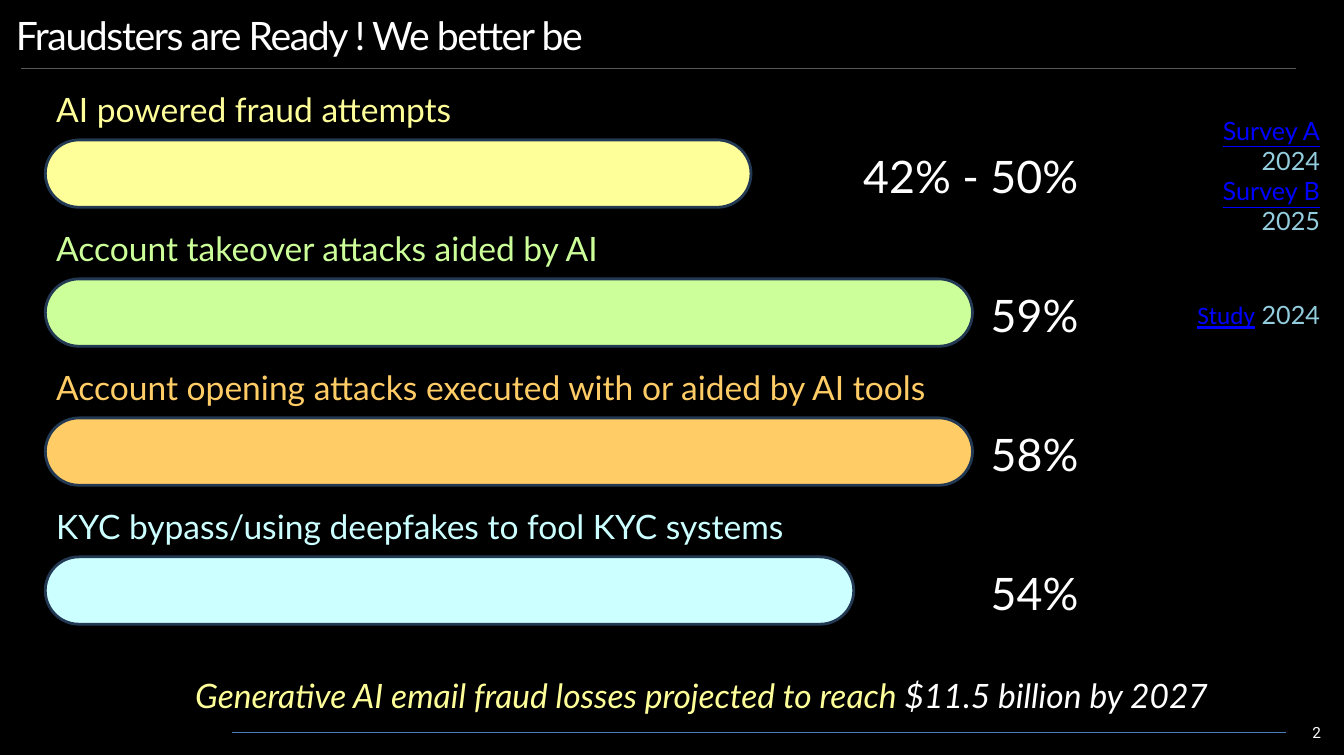
from dataclasses import dataclass

import pptx
import pptx.dml.color
import pptx.enum.shapes
import pptx.enum.text
import pptx.oxml
import pptx.util

Pt = pptx.util.Pt
Align = pptx.enum.text.PP_ALIGN
Anchor = pptx.enum.text.MSO_ANCHOR


@dataclass(frozen=True)
class Theme:
    """Colours, fonts and type sizes of the slide."""
    background: str = "000000"
    text: str = "FFFFFF"
    yellow: str = "FFFF99"
    green: str = "CCFF99"
    orange: str = "FFCC66"
    cyan: str = "CCFFFF"
    bar_edge: str = "233953"
    link: str = "0000FF"
    year: str = "93CDDD"
    header_rule: str = "595959"
    footer_rule: str = "4B7EBC"
    font: str = "Lato"
    number_font: str = "Roboto"
    title_size: float = 28
    label_size: float = 24
    value_size: float = 32
    citation_size: float = 18
    number_size: float = 11


THEME = Theme()

MEASURES = [
    ("AI powered fraud attempts", THEME.yellow, 504.7, "42% - 50%",
     [("Survey A", "2024", THEME.font), ("Survey B", "2025", THEME.font)]),
    ("Account takeover attacks aided by AI", THEME.green, 663.1, "59%",
     [("Study", "2024", "Calibri")]),
    ("Account opening attacks executed with or aided by AI tools",
     THEME.orange, 663.1, "58%", []),
    ("KYC bypass/using deepfakes to fool KYC systems", THEME.cyan, 578.2, "54%", []),
]


def rgb(colour):
    """Turn a hex string into a colour."""
    return pptx.dml.color.RGBColor.from_string(colour)


def style(font, size, colour, name=THEME.font):
    """Set size, colour and typeface of a font."""
    font.size = Pt(size)
    font.color.rgb = rgb(colour)
    font.name = name


def add_frame(slide, left, top, width, height, anchor=Anchor.TOP):
    """Add a wrapping text box and return its text frame."""
    frame = slide.shapes.add_textbox(Pt(left), Pt(top), Pt(width), Pt(height)).text_frame
    frame.word_wrap = True
    frame.vertical_anchor = anchor
    return frame


def add_line(slide, frame, words, size, colour, align=Align.LEFT, name=THEME.font):
    """Write one uniformly styled paragraph into a frame."""
    paragraph = frame.paragraphs[0]
    paragraph.alignment = align
    run = paragraph.add_run()
    run.text = words
    style(paragraph.font, size, colour, name)
    return run


def add_rule(slide, left, right, y, colour):
    """Draw a thin horizontal rule."""
    rule = slide.shapes.add_connector(
        pptx.enum.shapes.MSO_CONNECTOR.STRAIGHT, Pt(left), Pt(y), Pt(right), Pt(y))
    rule.line.color.rgb = rgb(colour)
    rule.line.width = Pt(0.75)
    rule._element.spPr.append(pptx.oxml.parse_xml(
        '<a:effectLst xmlns:a="http://schemas.openxmlformats.org/drawingml/2006/main"/>'))


def add_header(slide, left, top, width, height):
    """Place the title with the rule beneath it."""
    frame = add_frame(slide, left, top, width, height, Anchor.MIDDLE)
    title = add_line(slide, frame, "Fraudsters are Ready ! We better be",
                     THEME.title_size, THEME.text)
    title._r.get_or_add_rPr().set("spc", "-100")
    add_rule(slide, left + 10.8, left + width - 7.2, top + height, THEME.header_rule)


def add_citations(slide, left, top, width, height, citations):
    """List underlined source names with their years."""
    frame = add_frame(slide, left, top, width, height, Anchor.MIDDLE)
    for index, (source, year, source_font) in enumerate(citations):
        paragraph = frame.add_paragraph() if index else frame.paragraphs[0]
        paragraph.alignment = Align.RIGHT
        source_run = paragraph.add_run()
        source_run.text = source
        style(source_run.font, THEME.citation_size, THEME.link, source_font)
        source_run.font.underline = True
        year_run = paragraph.add_run()
        year_run.text = f" {year}"
        style(year_run.font, THEME.citation_size, THEME.year)


def add_measure(slide, left, top, width, measure):
    """Place one labelled bar with its value and citations."""
    label, colour, bar_width, value, citations = measure
    bar_top, bar_height = top + 40.3, 48.2
    bar = slide.shapes.add_shape(
        pptx.enum.shapes.MSO_SHAPE.ROUNDED_RECTANGLE,
        Pt(left), Pt(bar_top), Pt(bar_width), Pt(bar_height))
    bar.adjustments[0] = 0.5
    bar.shadow.inherit = False
    bar.fill.solid()
    bar.fill.fore_color.rgb = rgb(colour)
    bar.line.color.rgb = rgb(THEME.bar_edge)
    bar.line.width = Pt(2)

    add_line(slide, add_frame(slide, left + 0.7, top, 720, 36), label,
             THEME.label_size, colour)
    value_frame = add_frame(slide, left + 566, bar_top + 1.4, 180, bar_height, Anchor.MIDDLE)
    add_line(slide, value_frame, value, THEME.value_size, THEME.text, Align.RIGHT)
    if citations:
        add_citations(slide, left + width - 130, bar_top + 1.4, 130, bar_height, citations)


def add_measures(slide, left, top, width, height):
    """Stack the measures at an equal pitch."""
    pitch = height / len(MEASURES)
    for index, measure in enumerate(MEASURES):
        add_measure(slide, left, top + index * pitch, width, measure)


def add_projection(slide, left, top, width, height):
    """Place the closing loss projection."""
    paragraph = add_frame(slide, left, top, width, height).paragraphs[0]
    for words, colour in (
            ("Generative AI email fraud losses projected to reach ", THEME.yellow),
            ("$11.5 billion by 2027", THEME.text)):
        run = paragraph.add_run()
        run.text = words
        style(run.font, THEME.label_size, colour)
        run.font.italic = True


def add_footer(slide, left, top, width, height):
    """Place the footer rule and the slide number."""
    add_rule(slide, left, left + width - 33.8, top + height / 2, THEME.footer_rule)
    frame = add_frame(slide, left + width - 60, top, 60, height, Anchor.MIDDLE)
    frame.margin_right = Pt(8.6)
    add_line(slide, frame, "2", THEME.number_size, THEME.text, Align.RIGHT,
             THEME.number_font)


def main():
    """Build and save the slide."""
    deck = pptx.Presentation()
    deck.slide_width, deck.slide_height = Pt(961.2), Pt(540)
    slide = deck.slides.add_slide(deck.slide_layouts[6])
    slide.background.fill.solid()
    slide.background.fill.fore_color.rgb = rgb(THEME.background)
    add_header(slide, 4.3, 0.7, 929.5, 48.2)
    add_measures(slide, 32.4, 59.8, 918.7, 397.6)
    add_projection(slide, 132.5, 479.5, 802, 36)
    add_footer(slide, 165.6, 509.2, 787.7, 29.6)
    deck.save("out.pptx")


if __name__ == "__main__":
    main()
